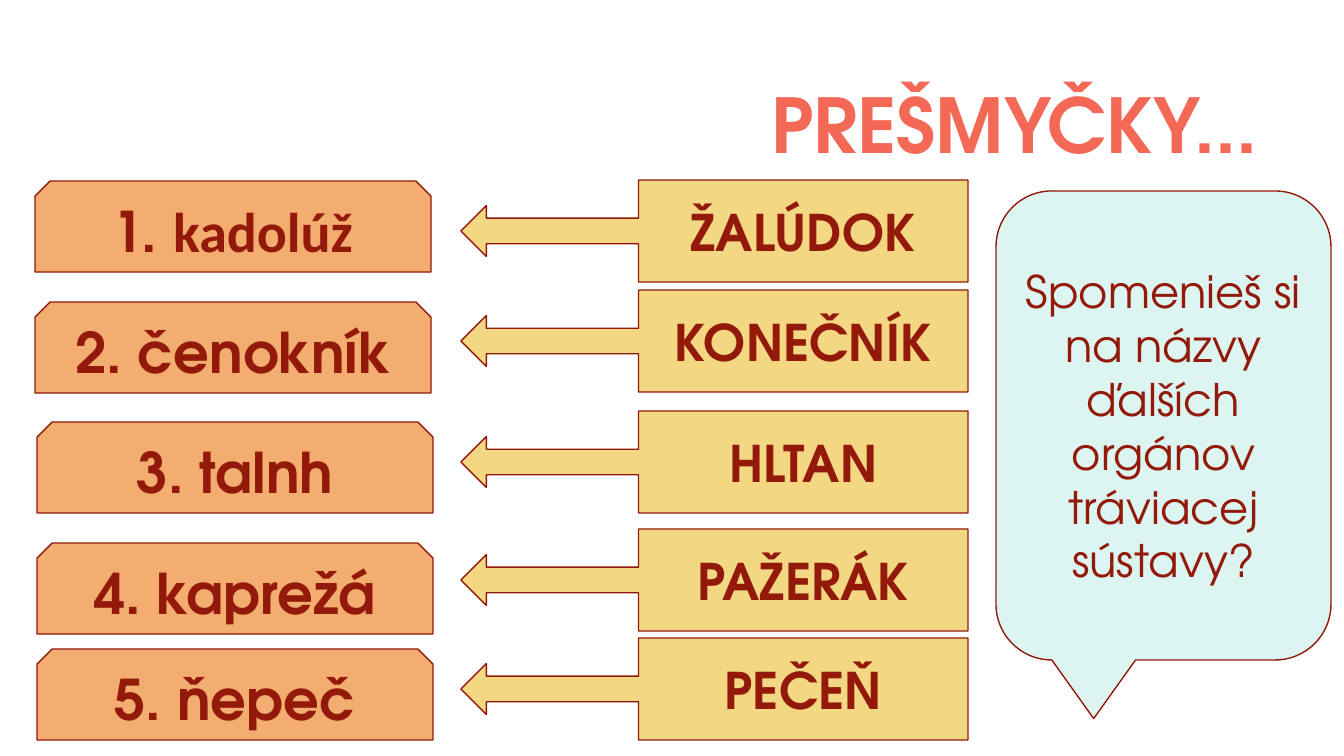
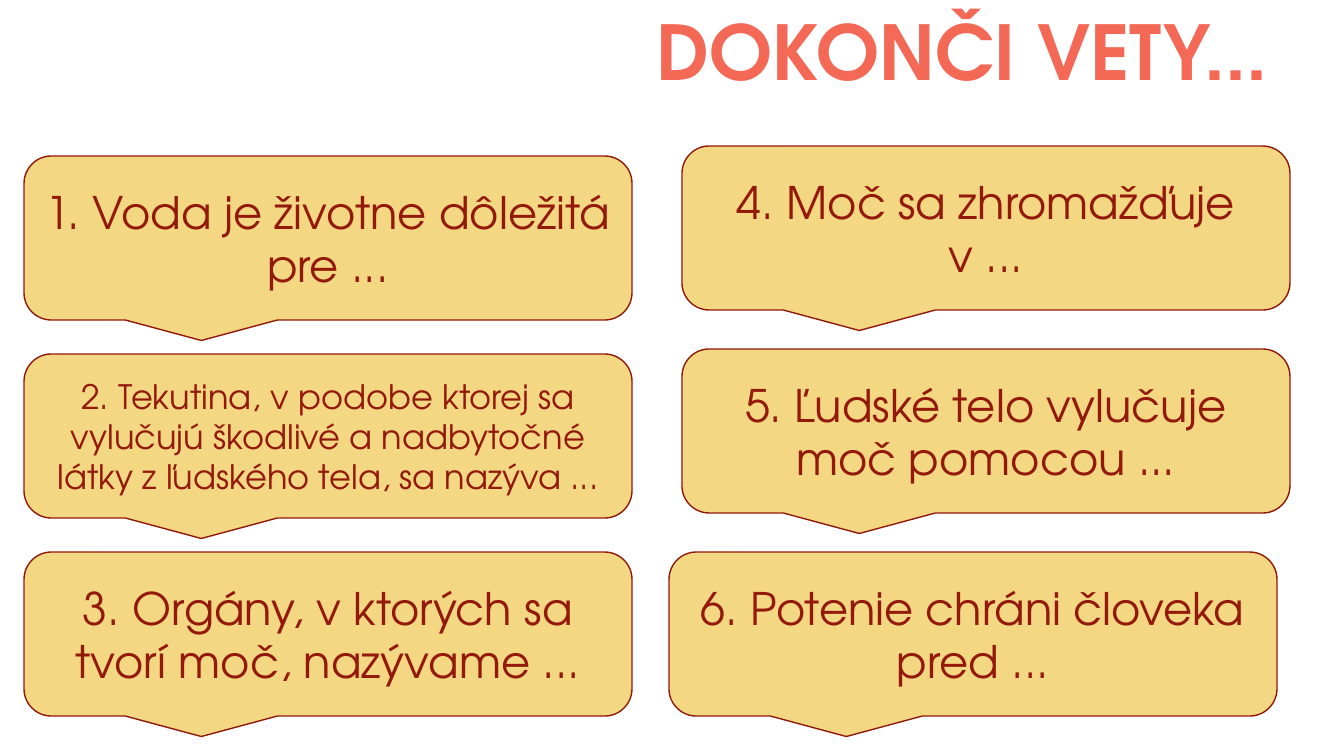
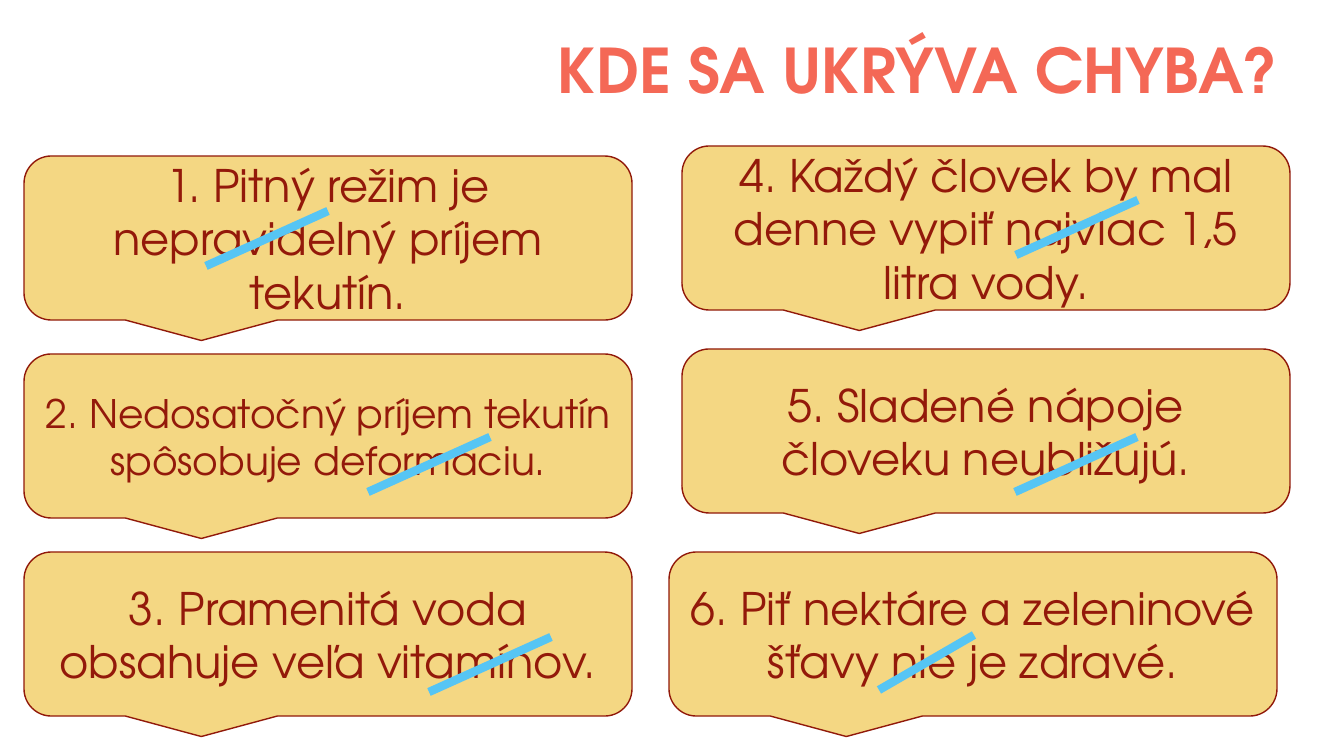
from pptx import Presentation
from pptx.dml.color import RGBColor
from pptx.enum.shapes import MSO_CONNECTOR, MSO_SHAPE
from pptx.enum.text import MSO_ANCHOR, PP_ALIGN
from pptx.oxml.ns import qn
from pptx.util import Emu, Pt

SNIPPED = MSO_SHAPE.SNIP_2_SAME_RECTANGLE
ARROW_BOX = MSO_SHAPE.LEFT_ARROW_CALLOUT
BUBBLE = MSO_SHAPE.ROUNDED_RECTANGULAR_CALLOUT
STRAIGHT = MSO_CONNECTOR.STRAIGHT
MIDDLE = MSO_ANCHOR.MIDDLE
CENTER, RIGHT = PP_ALIGN.CENTER, PP_ALIGN.RIGHT

THEME = {
    "font": "TeX Gyre Adventor", "plain_font": "Calibri",
    "title": "F46856", "text": "93190A", "outline": "91190A",
    "orange": "F4AD70", "yellow": "F4D783", "mint": "DCF5F0", "strike": "56C5F4",
    "title_size": 54, "puzzle_size": 40, "answer_size": 36, "body_size": 32,
    "outline_width": 1, "strike_width": 6,
}

# Content: titles with left, top and size
SCRAMBLE_TITLE = ("PREŠMYČKY...", 318, 58, THEME["title_size"])
FINISH_TITLE = ("DOKONČI VETY...", 328, -15, THEME["title_size"])
MISTAKE_TITLE = ("KDE SA UKRÝVA CHYBA?", 339, 3, 44)

# Scrambled word as runs, its left and top, then the answer and its top
SCRAMBLES = [
    (["1. ", "kadolúž"], 35, 181, "ŽALÚDOK", 180),
    (["2. čenokník"], 35, 302, "KONEČNÍK", 290),
    (["3. talnh"], 37, 422, "HLTAN", 411),
    (["4. kaprežá"], 37, 543, "PAŽERÁK", 529),
    (["5. ňepeč"], 37, 649, "PEČEŇ", 638),
]
QUESTION = "Spomenieš si na názvy ďalších orgánov tráviacej sústavy?"

# Sentences with text size
UNFINISHED = [
    ("1. Voda je životne dôležitá pre ...", THEME["body_size"]),
    ("2. Tekutina, v podobe ktorej sa vylučujú škodlivé a nadbytočné "
     "látky z ľudského tela, sa nazýva ...", 24),
    ("3. Orgány, v ktorých sa tvorí moč, nazývame ...", THEME["body_size"]),
    ("4. Moč sa zhromažďuje v ...", THEME["body_size"]),
    ("5. Ľudské telo vylučuje moč pomocou ...", THEME["body_size"]),
    ("6. Potenie chráni človeka pred ...", THEME["body_size"]),
]
MISTAKES = [
    ("1. Pitný režim je nepravidelný príjem tekutín.", THEME["body_size"]),
    ("2. Nedosatočný príjem tekutín spôsobuje deformáciu.", 28),
    ("3. Pramenitá voda obsahuje veľa vitamínov.", THEME["body_size"]),
    ("4. Každý človek by mal denne vypiť najviac 1,5 litra vody.", THEME["body_size"]),
    ("5. Sladené nápoje človeku neubližujú.", THEME["body_size"]),
    ("6. Piť nektáre a zeleninové šťavy nie je zdravé.", THEME["body_size"]),
]

# Layout in px
SLIDE_W, SLIDE_H = 1344, 756
TITLE_W, TITLE_H = 950, 142
PUZZLE_W, PUZZLE_H = 396, 91
ANSWER_X, ANSWER_W, ANSWER_H = 461, 507, 102
QUESTION_BOX = (996, 191, 335, 469)
SENTENCE_W, SENTENCE_H = 608, 164
SENTENCE_SPOTS = [(24, 156), (24, 354), (24, 552), (682, 146), (682, 349), (669, 552)]
# Strikes: lower left corner, width; all rise equally
STRIKES = [(206, 266, 122), (368, 492, 122), (429, 692, 122),
           (1016, 255, 122), (1015, 492, 122), (879, 690, 95)]
STRIKE_RISE = 55


def px(n):
    return Emu(round(n * 12192000 / SLIDE_W))


def rgb(name):
    return RGBColor.from_string(THEME[name])


def write(tf, runs, size, color, align, bold):
    tf.word_wrap = True
    tf.vertical_anchor = MIDDLE
    p = tf.paragraphs[0]
    p.alignment = align
    for text in runs:
        r = p.add_run()
        r.text = text
        r.font.name = THEME["font"]
        r.font.size = Pt(size)
        r.font.bold = bold
        r.font.color.rgb = rgb(color)
    return p


def add_slide(prs, title, left, top, size):
    s = prs.slides.add_slide(prs.slide_layouts[6])
    box = s.shapes.add_textbox(px(left), px(top), px(TITLE_W), px(TITLE_H))
    p = write(box.text_frame, [title], size, "title", RIGHT, True)
    p.line_spacing = 0.9
    return s


def add_box(s, kind, box, fill, runs, size, bold=False):
    sp = s.shapes.add_shape(kind, *map(px, box))
    sp.shadow.inherit = False
    sp.fill.solid()
    sp.fill.fore_color.rgb = rgb(fill)
    sp.line.color.rgb = rgb("outline")
    sp.line.width = Pt(THEME["outline_width"])
    return write(sp.text_frame, runs, size, "text", CENTER, bold)


def add_sentences(s, sentences):
    for (text, size), spot in zip(sentences, SENTENCE_SPOTS):
        add_box(s, BUBBLE, (*spot, SENTENCE_W, SENTENCE_H), "yellow", [text], size)


def add_strike(s, x, y, width):
    line = s.shapes.add_connector(STRAIGHT, px(x), px(y), px(x + width), px(y - STRIKE_RISE))
    line.line.color.rgb = rgb("strike")
    line.line.width = Pt(THEME["strike_width"])
    sp_pr = line._element.spPr
    sp_pr.append(sp_pr.makeelement(qn("a:effectLst"), {}))


def main():
    prs = Presentation()
    prs.slide_width, prs.slide_height = px(SLIDE_W), px(SLIDE_H)

    # Scrambled words
    s = add_slide(prs, *SCRAMBLE_TITLE)
    for runs, x, y, answer, answer_y in SCRAMBLES:
        p = add_box(s, SNIPPED, (x, y, PUZZLE_W, PUZZLE_H), "orange",
                    runs, THEME["puzzle_size"], True)
        for r in p.runs[1:]:
            r.font.name = THEME["plain_font"]
        add_box(s, ARROW_BOX, (ANSWER_X, answer_y, ANSWER_W, ANSWER_H), "yellow",
                [answer], THEME["answer_size"], True)
    add_box(s, BUBBLE, QUESTION_BOX, "mint", [QUESTION], THEME["body_size"])

    # Unfinished sentences
    s = add_slide(prs, *FINISH_TITLE)
    add_sentences(s, UNFINISHED)

    # Sentences with a mistake struck out
    s = add_slide(prs, *MISTAKE_TITLE)
    add_sentences(s, MISTAKES)
    for strike in STRIKES:
        add_strike(s, *strike)

    prs.save("out.pptx")


if __name__ == "__main__":
    main()
